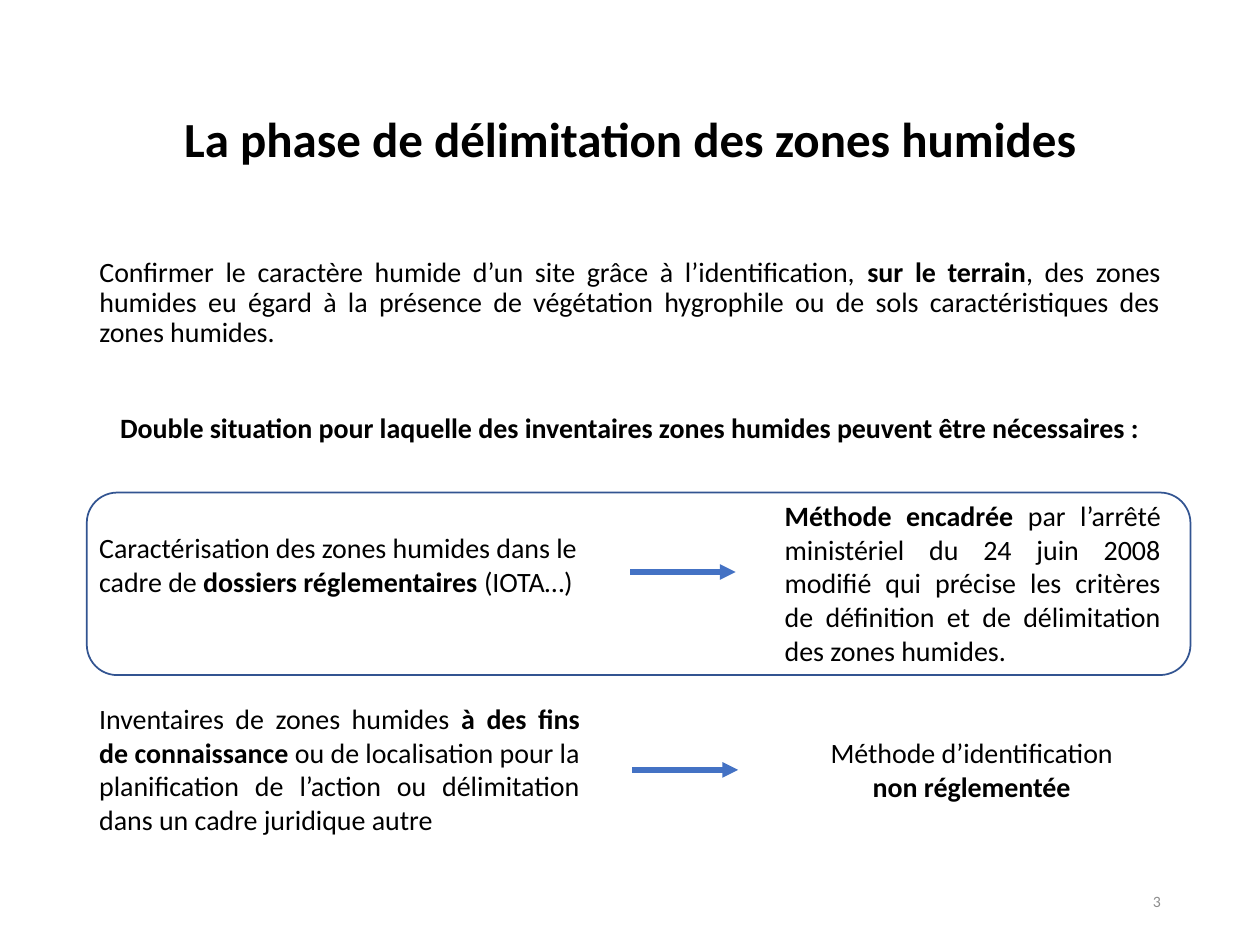
from lxml.etree import SubElement
from pptx import Presentation
from pptx.dml.color import RGBColor
from pptx.enum.shapes import MSO_CONNECTOR, MSO_SHAPE
from pptx.enum.text import MSO_ANCHOR, MSO_AUTO_SIZE, PP_ALIGN
from pptx.oxml.ns import qn
from pptx.util import Cm, Pt

BLACK = RGBColor(0x00, 0x00, 0x00)
GREY = RGBColor(0x8C, 0x8C, 0x8C)
BLUE = RGBColor(0x44, 0x72, 0xC4)
DARK_BLUE = RGBColor(0x32, 0x54, 0x91)
FONT = "Calibri"
LEFT, WIDTH = Cm(1.75), Cm(21.9)


def fill_paragraph(para, pieces, align, size=16, color=BLACK):
    """Write (text, bold) pieces as the runs of one paragraph."""
    para.alignment = align
    for text, bold in pieces:
        span = para.add_run()
        span.text = text
        span.font.name = FONT
        span.font.size = Pt(size)
        span.font.bold = bold
        span.font.color.rgb = color


def add_text(page, place, pieces, align, size=16, color=BLACK):
    """Add a wrapping text box; place is left, top, width, height in cm."""
    box = page.shapes.add_textbox(*[Cm(length) for length in place])
    box.text_frame.word_wrap = True
    fill_paragraph(box.text_frame.paragraphs[0], pieces, align, size, color)
    return box


deck = Presentation()
deck.slide_width, deck.slide_height = Cm(25.4), Cm(19.05)
page = deck.slides.add_slide(deck.slide_layouts[1])

# Title
title = page.shapes.title
title.left, title.top, title.width, title.height = LEFT, Cm(1.02), WIDTH, Cm(3.68)
title.text_frame.auto_size = MSO_AUTO_SIZE.NONE
title.text_frame.vertical_anchor = MSO_ANCHOR.MIDDLE
heading = title.text_frame.paragraphs[0]
heading.line_spacing = 0.9
fill_paragraph(heading, [("La phase de délimitation des zones humides", True)],
               PP_ALIGN.CENTER, 28)

# Introduction and lead-in, without bullets
body = page.placeholders[1]
body.left, body.top, body.width, body.height = LEFT, Cm(5.08), WIDTH, Cm(4.88)
body.text_frame.auto_size = MSO_AUTO_SIZE.NONE
introduction = body.text_frame.paragraphs[0]
lead_in = body.text_frame.add_paragraph()
for para, space in ((introduction, 0), (lead_in, 37.5)):
    para.line_spacing = 0.9
    para.space_before = Pt(space)
    properties = para._p.get_or_add_pPr()
    properties.set("marL", "0")
    properties.set("indent", "0")
    SubElement(properties, qn("a:buNone"))
fill_paragraph(introduction, [
    ("Confirmer le caractère humide d’un site grâce à l’identification, ", False),
    ("sur le terrain", True),
    (", des zones humides eu égard à la présence de végétation hygrophile "
     "ou de sols caractéristiques des zones humides.", False),
], PP_ALIGN.JUSTIFY)
fill_paragraph(lead_in, [
    ("Double situation pour laquelle des inventaires zones humides "
     "peuvent être nécessaires :", True),
], PP_ALIGN.CENTER)

# Situations on the left, methods on the right
add_text(page, (1.75, 10.57, 10.19, 1.63), [
    ("Caractérisation des zones humides dans le cadre de ", False),
    ("dossiers réglementaires", True),
    (" (IOTA…)", False),
], PP_ALIGN.LEFT)
add_text(page, (15.57, 9.93, 8.08, 3.68), [
    ("Méthode encadrée ", True),
    ("par l’arrêté ministériel du 24 juin 2008 modifié qui précise les critères "
     "de définition et de délimitation des zones humides.", False),
], PP_ALIGN.JUSTIFY)
add_text(page, (1.75, 14.02, 10.19, 3), [
    ("Inventaires de zones humides ", False),
    ("à des fins de connaissance", True),
    (" ou de localisation pour la planification de l’action ou délimitation "
     "dans un cadre juridique autre", False),
], PP_ALIGN.JUSTIFY)
add_text(page, (16.15, 14.71, 6.88, 1.63), [
    ("Méthode d’identification ", False),
    ("non réglementée", True),
], PP_ALIGN.CENTER)

# Arrows from situation to method
for start, height in ((12.7, 11.53), (12.75, 15.52)):
    arrow = page.shapes.add_connector(MSO_CONNECTOR.STRAIGHT, Cm(start), Cm(height),
                                      Cm(start + 2.13), Cm(height))
    arrow.line.color.rgb = BLUE
    arrow.line.width = Pt(3)
    SubElement(arrow.line._get_or_add_ln(), qn("a:tailEnd"), type="triangle")
    SubElement(arrow._element.spPr, qn("a:effectLst"))

# Frame around the regulated case
frame = page.shapes.add_shape(MSO_SHAPE.ROUNDED_RECTANGLE, LEFT, Cm(9.93),
                              Cm(22.25), Cm(3.68))
frame.shadow.inherit = False
frame.fill.background()
frame.line.color.rgb = DARK_BLUE
frame.line.width = Pt(1)

# Page number
number = add_text(page, (17.93, 17.65, 5.72, 1.02), [("3", False)],
                  PP_ALIGN.RIGHT, 9, GREY)
number.text_frame.vertical_anchor = MSO_ANCHOR.MIDDLE

deck.save("out.pptx")
